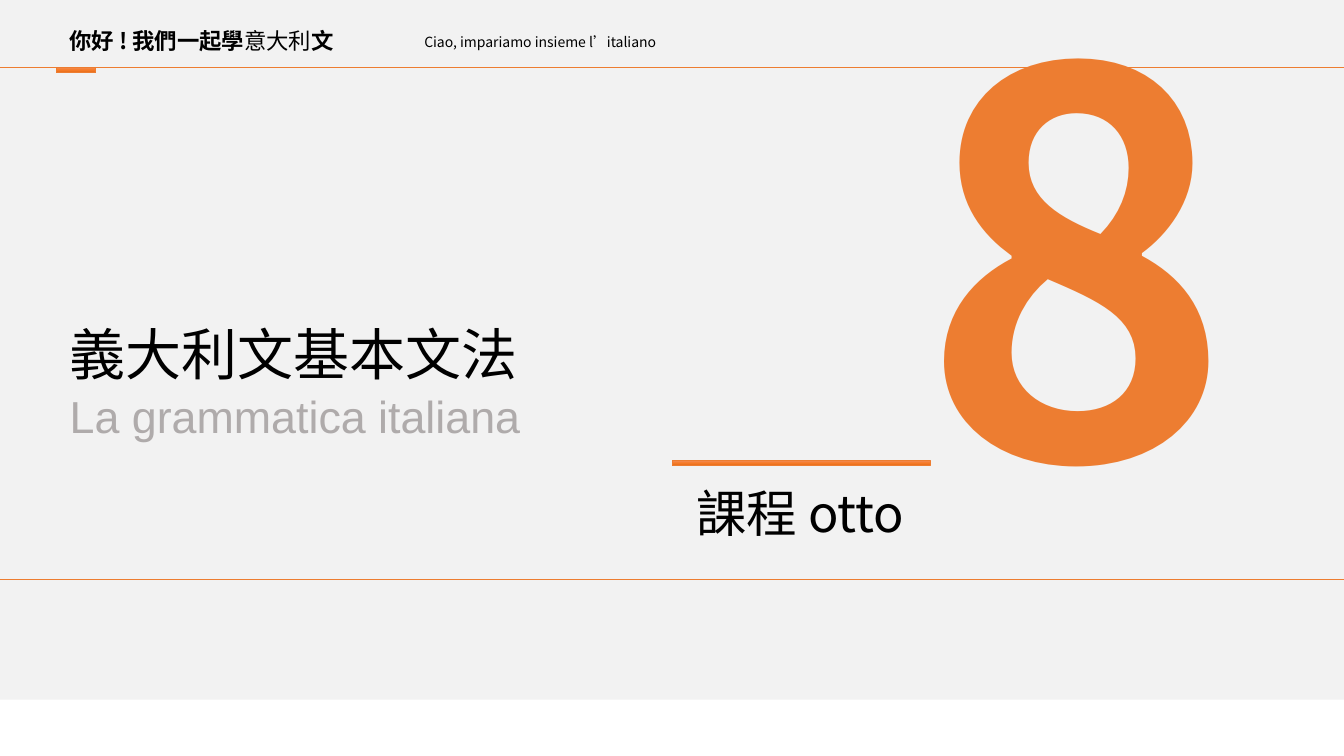
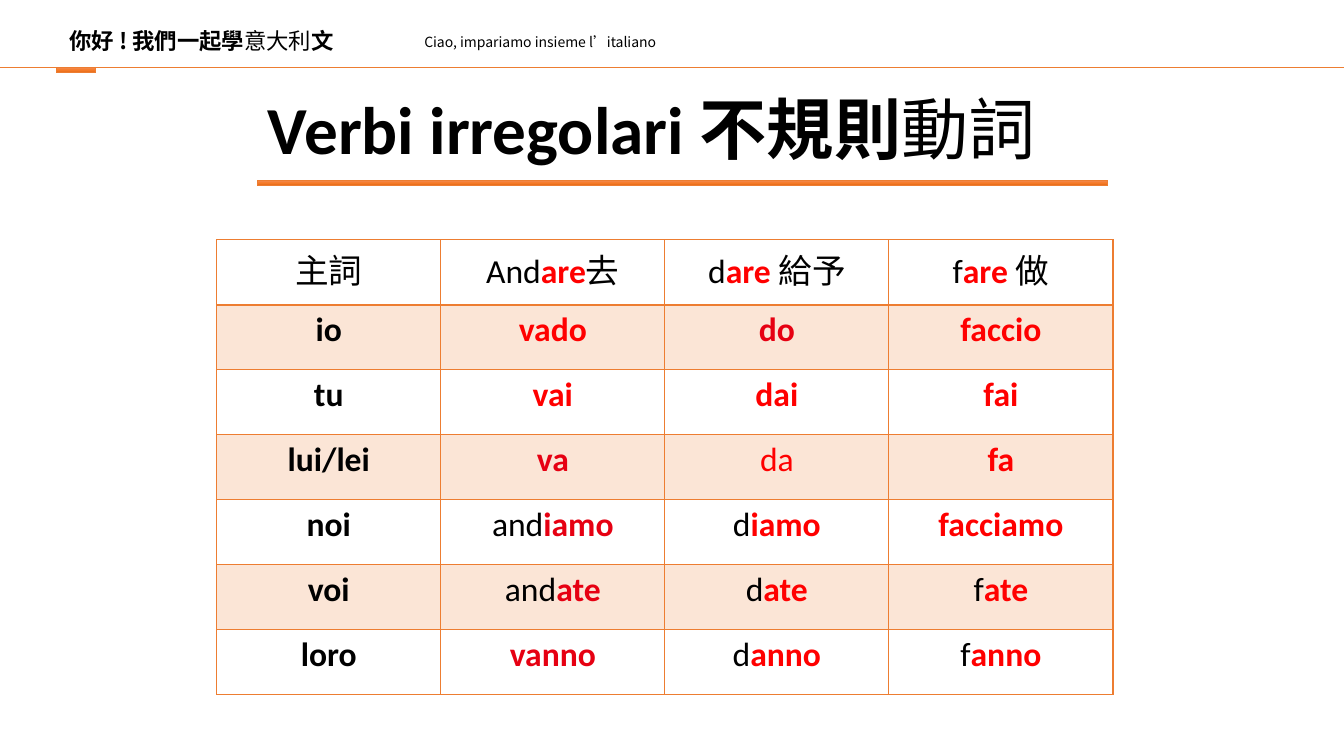
from copy import deepcopy

from lxml import etree
from pptx import Presentation
from pptx import util as u
from pptx.dml.color import RGBColor
from pptx.enum import shapes, text
from pptx.oxml.ns import qn

WIDE, HIGH = u.Inches(13.333), u.Inches(7.5)
ORANGE, PEACH, PALE, WHITE = "ED7D31", "FBE5D6", "F2F2F2", "FFFFFF"
BLACK, GREY, RED, DARK = "000000", "AFABAB", "FF0000", "E60012"
GLOSS = ((0, "F18C57"), (0.5, "F67B28"), (1, "E56C19"))
NOTO = "Noto Sans CJK SC"
LEFT, MID, RIGHT = text.PP_ALIGN.LEFT, text.PP_ALIGN.CENTER, text.PP_ALIGN.RIGHT
EDGE = 4.43   # left margin, in percent of the width
RULE = 8.93   # header rule, in percent of the height

# Run marks in the verb table: colour and weight
MARKS = {"*": (RED, True), "+": (DARK, True), "~": (RED, False), "#": (BLACK, True)}
VERBS = (
    ("主詞", "And|*are|去", "d|*are |給予", "f|*are |做"),
    ("#io", "*vado", "+do", "*faccio"),
    ("#tu", "*vai", "*dai", "*fai"),
    ("#lui/lei", "+va", "~da", "*fa"),
    ("#noi", "and|+iamo", "d|*iamo", "*facciamo"),
    ("#voi", "and|+ate", "d|*ate", "f|*ate"),
    ("#loro", "+vanno", "d|*anno", "f|*anno"),
)


def rgb(code):
    return RGBColor.from_string(code)


def at(x, y, w, h):
    """Turn percentages of the slide into lengths."""
    return [int(side * part / 100)
            for side, part in zip((WIDE, HIGH, WIDE, HIGH), (x, y, w, h))]


def face(font, name, east=NOTO):
    """Set the Latin and the East Asian typeface."""
    font.name = name
    font._element.find(qn("a:latin")).addnext(
        etree.Element(qn("a:ea"), typeface=east))


def write(para, runs, size, name=NOTO, east=NOTO, align=LEFT):
    """Fill a paragraph with (text, colour, bold, own typeface or None) runs."""
    para.alignment = align
    para.font.size = u.Pt(size)
    face(para.font, name, east)
    for words, tint, bold, own in runs:
        run = para.add_run()
        run.text = words
        run.font.color.rgb = rgb(tint)
        run.font.bold = bold
        if own:
            face(run.font, own)


def label(shape, place, runs, size, **style):
    """Place a text shape and write one paragraph, centred in height."""
    shape.left, shape.top, shape.width, shape.height = at(*place)
    frame = shape.text_frame
    frame.word_wrap = True
    frame.auto_size = text.MSO_AUTO_SIZE.NONE
    frame.vertical_anchor = text.MSO_ANCHOR.MIDDLE
    para = frame.paragraphs[0]
    para.space_before = u.Pt(0)
    write(para, runs, size, **style)
    return frame


def note(slide, place, runs, size, **style):
    return label(slide.shapes.add_textbox(*at(*place)), place, runs, size, **style)


def block(slide, place):
    shape = slide.shapes.add_shape(shapes.MSO_SHAPE.RECTANGLE, *at(*place))
    shape.shadow.inherit = False
    return shape


def bar(slide, x, y, w):
    """Draw a thin glossy orange bar."""
    shape = block(slide, (x, y, w, 0.67))
    shape.line.color.rgb = rgb(ORANGE)
    shape.line.width = u.Pt(0.5)
    fill = shape.fill
    fill.gradient()
    fill.gradient_angle = 270
    stops = shape._element.spPr.find(".//" + qn("a:gsLst"))
    stops.insert(1, deepcopy(stops[0]))
    for stop, (spot, tint) in zip(fill.gradient_stops, GLOSS):
        stop.position = spot
        stop.color.rgb = rgb(tint)


def rule(slide, y):
    x, top, w, _ = at(0, y, 100, 0)
    line = slide.shapes.add_connector(shapes.MSO_CONNECTOR.STRAIGHT, x, top, w, top)
    line.line.color.rgb = rgb(ORANGE)
    line.line.width = u.Pt(0.5)
    etree.SubElement(line._element.spPr, qn("a:effectLst"))


def header(slide):
    note(slide, (EDGE, 2.93, 25.88, 4.93),
         [("你好 ! 我們一起學", BLACK, True, None),
          ("意大利", BLACK, False, "Arial"),
          ("文", BLACK, True, None)], 16)
    note(slide, (30.83, 3.73, 63.08, 3.6),
         [("Ciao, impariamo insieme l’italiano", BLACK, False, None)], 10)
    rule(slide, RULE)
    bar(slide, 4.2, RULE, 2.93)


def start(deck, layout, tint):
    slide = deck.slides.add_slide(deck.slide_layouts[layout])
    slide.background.fill.solid()
    slide.background.fill.fore_color.rgb = rgb(tint)
    return slide


def border(cell, low, high):
    """Line a cell on four sides, with its own widths below and above."""
    sides = (("L", 1), ("R", 1), ("T", high), ("B", low))
    props = cell._tc.get_or_add_tcPr()
    for spot, (side, width) in enumerate(sides):
        line = etree.Element(qn("a:ln" + side), w=str(u.Pt(width)))
        fill = etree.SubElement(line, qn("a:solidFill"))
        etree.SubElement(fill, qn("a:srgbClr"), val=ORANGE)
        props.insert(spot, line)


def parse_runs(mark):
    """Split a marked cell text into runs."""
    for part in mark.split("|"):
        if part[0] in MARKS:
            yield (part[1:], *MARKS[part[0]], None)
        else:
            yield part, BLACK, False, None


def grid(slide, rows, place):
    table = slide.shapes.add_table(len(rows), len(rows[0]), *at(*place)).table
    table.first_row = table.horz_banding = False
    for r, row in enumerate(rows):
        for c, mark in enumerate(row):
            cell = table.cell(r, c)
            cell.fill.solid()
            cell.fill.fore_color.rgb = rgb(PEACH if r % 2 else WHITE)
            border(cell, 2 if r == 0 else 1, 2 if r == 1 else 1)
            write(cell.text_frame.paragraphs[0], parse_runs(mark), 24,
                  name="Calibri", align=MID)


def cover(deck):
    slide = start(deck, 0, PALE)
    title, sub = slide.placeholders
    label(title, (EDGE, 41.33, 60, 10.67),
          [("義大利文基本文法", BLACK, False, None)], 40,
          name="Noto Sans CJK TC", east="Noto Sans CJK TC")
    label(sub, (EDGE, 51.33, 60, 7.2),
          [("La grammatica italiana", GREY, False, None)], 32, name="Arial")
    note(slide, (47.03, 63.07, 21, 9.47),
         [("課程 otto", BLACK, False, None)], 36, align=RIGHT)
    digit = note(slide, (67.65, 0, 32.35, 86.67), [("8", ORANGE, True, None)], 380,
                 name="Noto Sans CJK JP", east="Noto Sans CJK JP")
    digit.vertical_anchor = text.MSO_ANCHOR.TOP
    digit.paragraphs[0].line_spacing = 0.89
    foot = block(slide, (0, 92.53, 100, 7.47))
    foot.fill.solid()
    foot.fill.fore_color.rgb = rgb(WHITE)
    foot.line.fill.background()
    rule(slide, 76.67)
    header(slide)
    bar(slide, 50, 60.93, 19.2)


def verbs(deck):
    slide = start(deck, 5, WHITE)
    header(slide)
    label(slide.shapes.title, (0, 10.8, 97, 12.13),
          [("Verbi irregolari 不規則", BLACK, True, None),
           ("動詞", BLACK, False, NOTO)], 48, name="Calibri", align=MID)
    bar(slide, 19.13, 23.87, 63.3)
    grid(slide, VERBS, (16.13, 31.73, 66.68, 60.13))


def main():
    deck = Presentation()
    deck.slide_width, deck.slide_height = WIDE, HIGH
    cover(deck)
    verbs(deck)
    deck.save("out.pptx")


if __name__ == "__main__":
    main()
